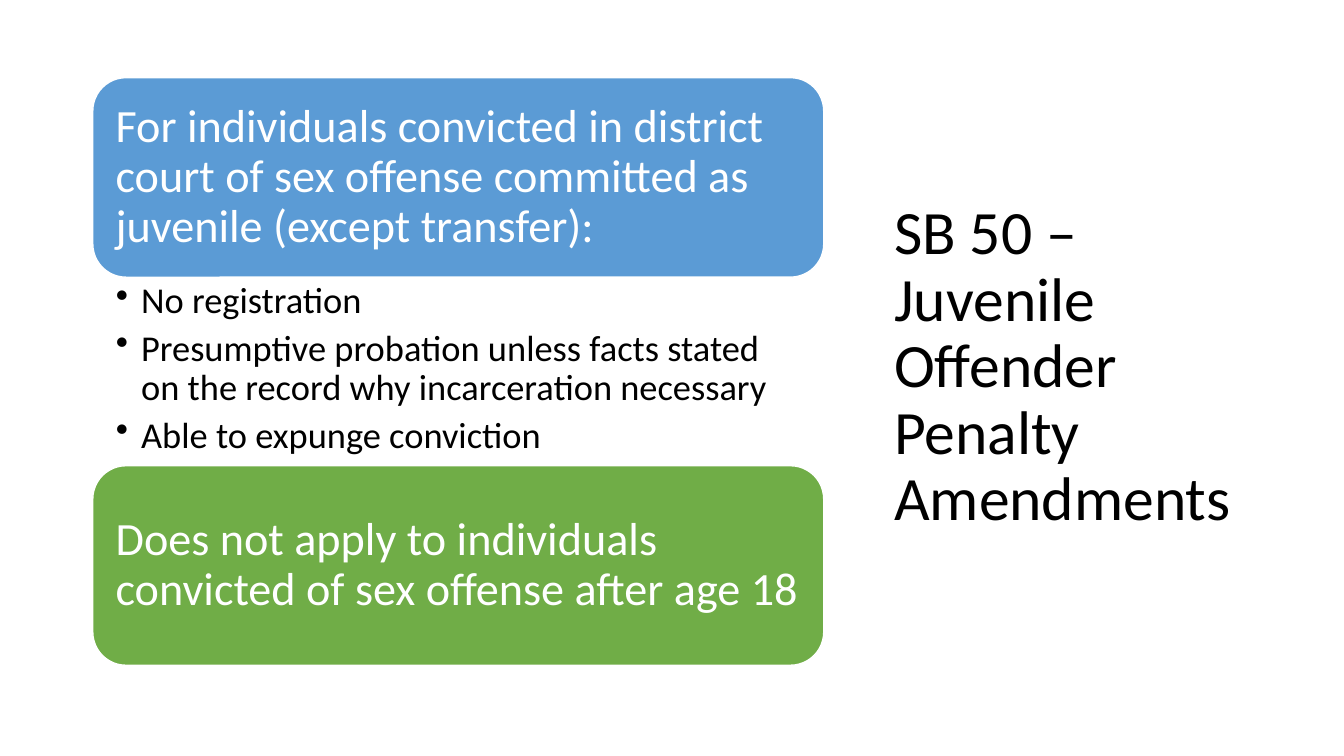
from lxml.etree import SubElement
from pptx import Presentation
from pptx.dml.color import RGBColor
from pptx.enum.shapes import MSO_SHAPE
from pptx.enum.text import MSO_ANCHOR, PP_ALIGN
from pptx.oxml.ns import qn
from pptx.util import Pt

PX = 9144  # 100 px to the inch
BLUE = RGBColor(0x5B, 0x9B, 0xD5)
GREEN = RGBColor(0x70, 0xAD, 0x47)
WHITE = RGBColor(0xFF, 0xFF, 0xFF)
BLACK = RGBColor(0, 0, 0)
FONT = "Calibri"

LEFT, TOP, WIDTH = 92, 77, 725
CARD, LIST = 198, 187  # heights

RULE = "For individuals convicted in district court of sex offense committed as juvenile (except transfer):"
POINTS = [
    "No registration",
    "Presumptive probation unless facts stated on the record why incarceration necessary",
    "Able to expunge conviction",
]
LIMIT = "Does not apply to individuals convicted of sex offense after age 18"
TITLE = "SB 50 – Juvenile Offender Penalty Amendments"


def px(*sizes):
    return [size * PX for size in sizes]


def set_frame(frame, insets, anchor):
    """Wrap the text and set its left, top, right and bottom insets."""
    frame.word_wrap = True
    frame.vertical_anchor = anchor
    (frame.margin_left, frame.margin_top,
     frame.margin_right, frame.margin_bottom) = px(*insets)


def add_run(para, text, size, color):
    para.alignment = PP_ALIGN.LEFT
    para.line_spacing = 0.9
    run = para.add_run()
    run.text = text
    run.font.name = FONT
    run.font.size = Pt(size)
    run.font.color.rgb = color


def add_bullet(para):
    props = para._p.get_or_add_pPr()
    props.set("marL", str(25 * PX))
    props.set("indent", str(-25 * PX))
    SubElement(props, qn("a:buChar"), char="•")


def add_card(slide, top, fill, text):
    card = slide.shapes.add_shape(
        MSO_SHAPE.ROUNDED_RECTANGLE, *px(LEFT, top, WIDTH, CARD))
    card.shadow.inherit = False
    card.fill.solid()
    card.fill.fore_color.rgb = fill
    card.line.color.rgb = WHITE
    card.line.width = Pt(1)
    # The preset's own text area is already inset by its corners.
    set_frame(card.text_frame, (13, 13, 13, 13), MSO_ANCHOR.MIDDLE)
    add_run(card.text_frame.paragraphs[0], text, 33, WHITE)


def add_list(slide, top, points):
    frame = slide.shapes.add_textbox(*px(LEFT, top, WIDTH, LIST)).text_frame
    set_frame(frame, (23, 5, 26, 5), MSO_ANCHOR.TOP)
    for i, point in enumerate(points):
        para = frame.add_paragraph() if i else frame.paragraphs[0]
        add_run(para, point, 26, BLACK)
        para.space_after = Pt(6)
        add_bullet(para)


def add_title(slide, text):
    frame = slide.shapes.add_textbox(*px(877, 60, 365, 610)).text_frame
    set_frame(frame, (10, 5, 10, 5), MSO_ANCHOR.MIDDLE)
    add_run(frame.paragraphs[0], text, 44, BLACK)


def main():
    deck = Presentation()
    deck.slide_width, deck.slide_height = px(1333, 750)
    slide = deck.slides.add_slide(deck.slide_layouts[6])
    add_title(slide, TITLE)
    add_card(slide, TOP, BLUE, RULE)
    add_list(slide, TOP + CARD, POINTS)
    add_card(slide, TOP + CARD + LIST, GREEN, LIMIT)
    deck.save("out.pptx")


if __name__ == "__main__":
    main()
